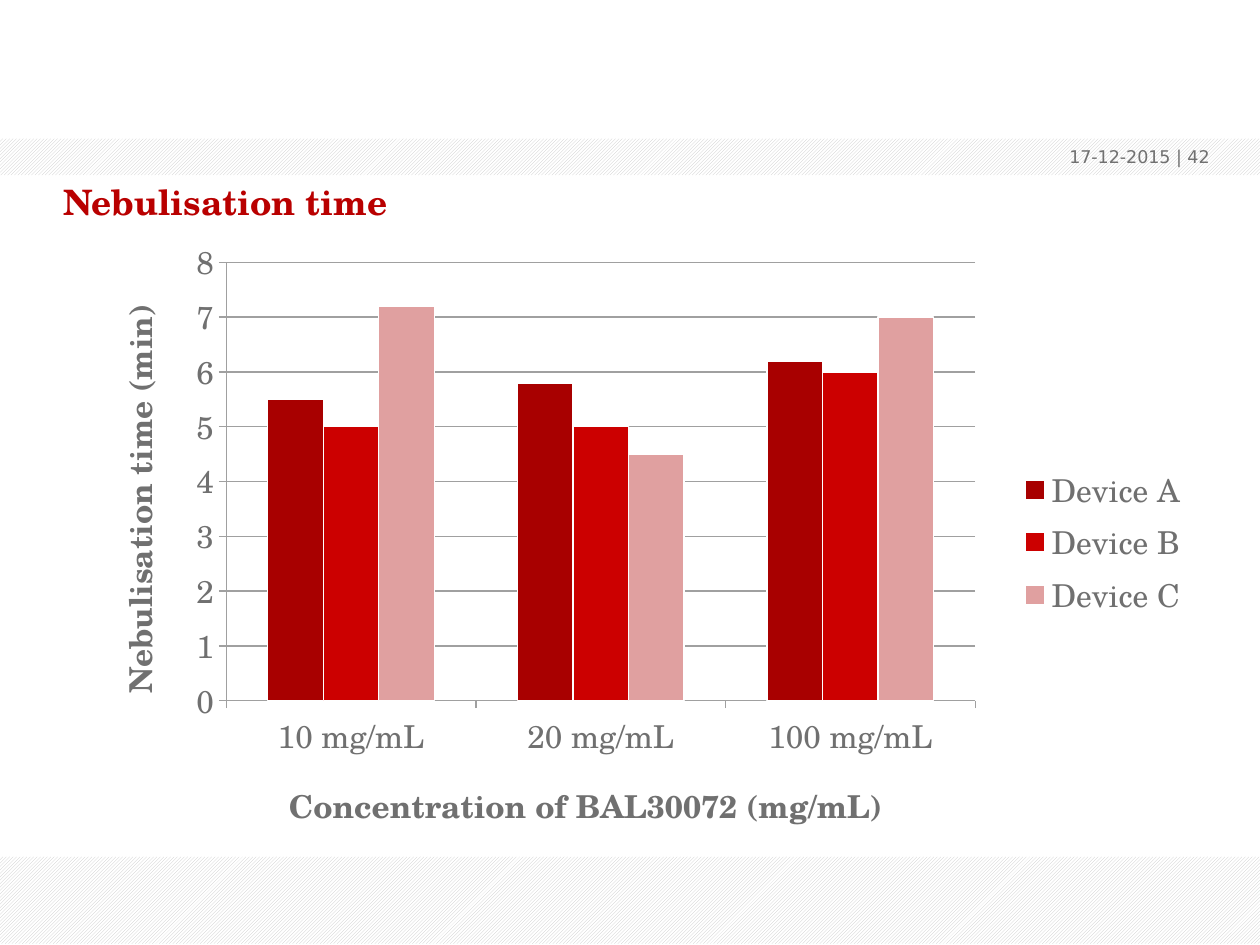
import pptx
import pptx.chart.data
import pptx.dml.color
import pptx.enum.chart
import pptx.enum.dml
import pptx.enum.shapes
import pptx.enum.text
import pptx.oxml
import pptx.oxml.ns
import pptx.util

RGBColor = pptx.dml.color.RGBColor
Inches = pptx.util.Inches
Pt = pptx.util.Pt

WHITE = RGBColor(0xFF, 0xFF, 0xFF)
HATCH_GREY = RGBColor(0xC8, 0xC8, 0xC8)
TEXT_GREY = RGBColor(0x70, 0x70, 0x70)
LINE_GREY = RGBColor(0xA0, 0xA0, 0xA0)
TITLE_RED = RGBColor(0xB9, 0x00, 0x00)
DARK_RED = RGBColor(0xA8, 0x00, 0x00)
BRIGHT_RED = RGBColor(0xCC, 0x00, 0x00)
PALE_RED = RGBColor(0xE0, 0xA0, 0xA0)

SERIF = "TeX Gyre Schola"
SANS = "DejaVu Sans"
WIDTH, HEIGHT = 10, 7.5
BAND_TOP, BAND_HEIGHT = 1.1, 0.29
DATE_LEFT, NUMBER_LEFT = 7.21, 9.29

CATEGORIES = ["10 mg/mL", "20 mg/mL", "100 mg/mL"]
NEBULISERS = [
    ("Device A", (5.5, 5.8, 6.2), DARK_RED),
    ("Device B", (5, 5, 6), BRIGHT_RED),
    ("Device C", (7.2, 4.5, 7), PALE_RED),
]
PLOT_SHARES = {"x": 0.127, "y": 0.058, "w": 0.671, "h": 0.692}


def box(left, top, width, height):
    return [Inches(length) for length in (left, top, width, height)]


def format_font(font, name, size, color, bold=False):
    font.name = name
    font.size = Pt(size)
    font.color.rgb = color
    font.bold = bold


def clear_margins(text_frame):
    text_frame.margin_left = text_frame.margin_right = 0
    text_frame.margin_top = text_frame.margin_bottom = 0
    text_frame.word_wrap = True


def add_hatched_band(slide, top, height):
    band = slide.shapes.add_shape(
        pptx.enum.shapes.MSO_SHAPE.RECTANGLE, *box(0, top, WIDTH, height))
    band.shadow.inherit = False
    band.fill.patterned()
    band.fill.pattern = pptx.enum.dml.MSO_PATTERN.LIGHT_UPWARD_DIAGONAL
    band.fill.fore_color.rgb = HATCH_GREY
    band.fill.back_color.rgb = WHITE
    band.line.fill.background()


def add_band_text(slide, text, left, right, alignment):
    shape = slide.shapes.add_textbox(*box(left, BAND_TOP, right - left, BAND_HEIGHT))
    text_frame = shape.text_frame
    clear_margins(text_frame)
    text_frame.vertical_anchor = pptx.enum.text.MSO_ANCHOR.MIDDLE
    text_frame.text = text
    paragraph = text_frame.paragraphs[0]
    paragraph.alignment = alignment
    format_font(paragraph.runs[0].font, SANS, 10, TEXT_GREY)


def set_title(slide, text):
    """The tab before the title is larger than the title and sets the line height."""
    title = slide.shapes.title
    title.left, title.top, title.width, title.height = box(0, 1.32, WIDTH, 0.47)
    text_frame = title.text_frame
    clear_margins(text_frame)
    text_frame.auto_size = pptx.enum.text.MSO_AUTO_SIZE.NONE
    text_frame.vertical_anchor = pptx.enum.text.MSO_ANCHOR.TOP
    paragraph = text_frame.paragraphs[0]
    paragraph.alignment = pptx.enum.text.PP_ALIGN.LEFT
    for part, size in (("\t", 28), (text, 20)):
        run = paragraph.add_run()
        run.text = part
        format_font(run.font, SERIF, size, TITLE_RED, bold=True)


def format_axis(axis, title, rotation):
    text_frame = axis.axis_title.text_frame
    text_frame.text = title
    format_font(text_frame.paragraphs[0].runs[0].font, SERIF, 18, TEXT_GREY, bold=True)
    body = axis.axis_title._element.find(".//" + pptx.oxml.ns.qn("a:bodyPr"))
    body.set("rot", str(rotation * 60000))
    axis.major_tick_mark = pptx.enum.chart.XL_TICK_MARK.OUTSIDE
    axis.minor_tick_mark = pptx.enum.chart.XL_TICK_MARK.NONE
    axis.format.line.color.rgb = LINE_GREY
    axis.format.line.width = Pt(0.75)


def place_plot(chart):
    plot_area = chart._chartSpace.chart.plotArea
    for layout in plot_area.findall(pptx.oxml.ns.qn("c:layout")):
        plot_area.remove(layout)
    modes = '<c:xMode val="edge"/><c:yMode val="edge"/>'
    shares = "".join(f'<c:{key} val="{value}"/>' for key, value in PLOT_SHARES.items())
    plot_area.insert(0, pptx.oxml.parse_xml(
        f'<c:layout {pptx.oxml.ns.nsdecls("c")}><c:manualLayout>'
        f'<c:layoutTarget val="inner"/>{modes}{shares}</c:manualLayout></c:layout>'))


def add_time_chart(slide):
    data = pptx.chart.data.CategoryChartData()
    data.categories = CATEGORIES
    for name, minutes, _ in NEBULISERS:
        data.add_series(name, minutes)
    chart = slide.shapes.add_chart(
        pptx.enum.chart.XL_CHART_TYPE.COLUMN_CLUSTERED,
        *box(0.67, 1.79, 8.86, 5.03), data).chart
    format_font(chart.font, SERIF, 18, TEXT_GREY)
    chart.has_title = False
    chart.has_legend = True
    chart.legend.position = pptx.enum.chart.XL_LEGEND_POSITION.RIGHT
    chart.legend.include_in_layout = False

    plot = chart.plots[0]
    plot.gap_width = 150
    plot.overlap = 0
    plot.vary_by_categories = False
    for series, (_, _, color) in zip(plot.series, NEBULISERS):
        series.format.fill.solid()
        series.format.fill.fore_color.rgb = color
        series.format.line.color.rgb = WHITE
        series.format.line.width = Pt(0.75)

    format_axis(chart.category_axis, "Concentration of BAL30072 (mg/mL)", 0)
    value_axis = chart.value_axis
    format_axis(value_axis, "Nebulisation time (min)", -90)
    value_axis.minimum_scale, value_axis.maximum_scale = 0, 8
    value_axis.major_unit = 1
    value_axis.tick_labels.number_format = "General"
    value_axis.tick_labels.number_format_is_linked = False
    value_axis.has_major_gridlines = True
    value_axis.major_gridlines.format.line.color.rgb = LINE_GREY
    value_axis.major_gridlines.format.line.width = Pt(0.75)
    place_plot(chart)


def main():
    presentation = pptx.Presentation()
    presentation.slide_width = Inches(WIDTH)
    presentation.slide_height = Inches(HEIGHT)
    slide = presentation.slides.add_slide(presentation.slide_layouts[5])
    add_hatched_band(slide, BAND_TOP, BAND_HEIGHT)
    add_hatched_band(slide, 6.8, 0.69)
    alignments = pptx.enum.text.PP_ALIGN
    add_band_text(slide, "17-12-2015", DATE_LEFT, NUMBER_LEFT, alignments.RIGHT)
    add_band_text(slide, " | 42", NUMBER_LEFT, WIDTH, alignments.LEFT)
    set_title(slide, "Nebulisation time")
    add_time_chart(slide)
    presentation.save("out.pptx")


if __name__ == "__main__":
    main()
